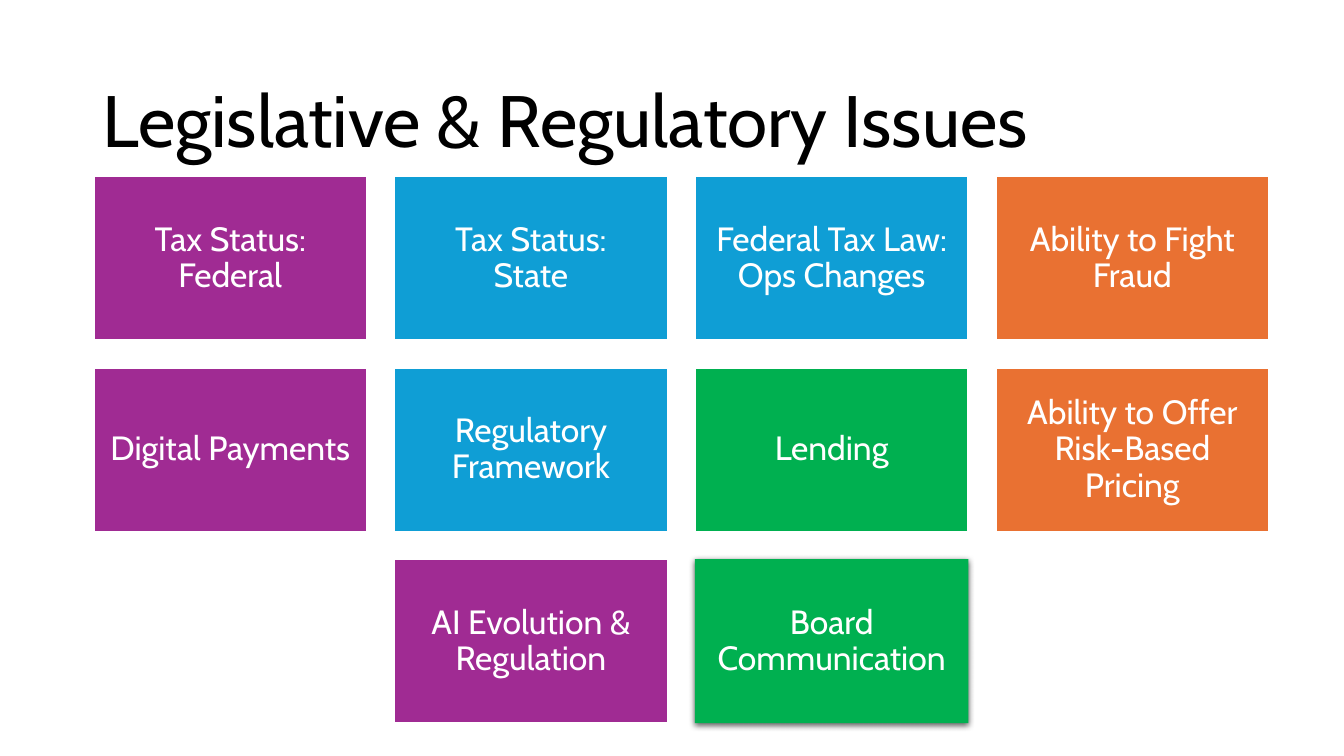
import pptx
import pptx.dml.color
import pptx.enum.shapes
import pptx.enum.text
import pptx.oxml.ns
import pptx.util
from lxml import etree

Pt = pptx.util.Pt

FONT = "Cabin"
WHITE, BLACK = "FFFFFF", "000000"
PURPLE, BLUE, GREEN, ORANGE = "A02B93", "0F9ED5", "00B050", "E97132"

TITLE = "Legislative & Regulatory Issues"
ISSUE_ROWS = [
    [
        (["Tax Status: Federal"], PURPLE),
        (["Tax Status:", "State"], BLUE),
        (["Federal Tax Law: Ops Changes"], BLUE),
        (["Ability to Fight Fraud"], ORANGE),
    ],
    [
        (["Digital Payments"], PURPLE),
        (["Regulatory Framework"], BLUE),
        (["Lending"], GREEN),
        (["Ability to Offer Risk-Based Pricing"], ORANGE),
    ],
    [
        (["AI Evolution & Regulation"], PURPLE),
        (["Board Communication"], GREEN),
    ],
]
RAISED_ISSUE = "Board Communication"

COLUMNS = 4
GRID_LEFT, GRID_TOP = 66.8, 126
TILE_WIDTH, TILE_HEIGHT = 195.3, 117.2
GAP = 19.5
TILE_INSET = 7.2


def color(hex_value):
    return pptx.dml.color.RGBColor.from_string(hex_value)


def write(text_frame, lines, size, hex_value, alignment):
    text_frame.word_wrap = True
    text_frame.vertical_anchor = pptx.enum.text.MSO_ANCHOR.MIDDLE
    paragraph = text_frame.paragraphs[0]
    paragraph.alignment = alignment
    paragraph.line_spacing = 0.9
    for index, line in enumerate(lines):
        if index:
            paragraph.add_line_break()
        run = paragraph.add_run()
        run.text = line
        run.font.name = FONT
        run.font.size = Pt(size)
        run.font.color.rgb = color(hex_value)


def add_soft_shadow(shape):
    qn = pptx.oxml.ns.qn
    effects = shape._element.spPr.find(qn("a:effectLst"))
    shadow = etree.SubElement(
        effects, qn("a:outerShdw"), blurRad=str(Pt(4.5)), dist=str(Pt(1.5)),
        dir="5400000", algn="ctr", rotWithShape="0")
    shadow_color = etree.SubElement(shadow, qn("a:srgbClr"), val=BLACK)
    etree.SubElement(shadow_color, qn("a:alpha"), val="63000")


def add_tile(slide, left, top, lines, fill):
    shape = slide.shapes.add_shape(
        pptx.enum.shapes.MSO_SHAPE.RECTANGLE,
        Pt(left), Pt(top), Pt(TILE_WIDTH), Pt(TILE_HEIGHT))
    shape.shadow.inherit = False
    shape.fill.solid()
    shape.fill.fore_color.rgb = color(fill)
    if lines == [RAISED_ISSUE]:
        shape.line.fill.background()
        add_soft_shadow(shape)
    else:
        shape.line.color.rgb = color(WHITE)
        shape.line.width = Pt(1.5)
    frame = shape.text_frame
    frame.margin_left = frame.margin_right = Pt(TILE_INSET)
    frame.margin_top = frame.margin_bottom = Pt(TILE_INSET)
    write(frame, lines, 24, WHITE, pptx.enum.text.PP_ALIGN.CENTER)


def main():
    presentation = pptx.Presentation()
    presentation.slide_width, presentation.slide_height = Pt(960), Pt(540)
    slide = presentation.slides.add_slide(presentation.slide_layouts[6])

    title = slide.shapes.add_textbox(Pt(66), Pt(44), Pt(828), Pt(89))
    write(title.text_frame, [TITLE], 52, BLACK, pptx.enum.text.PP_ALIGN.LEFT)

    for row, issues in enumerate(ISSUE_ROWS):
        first_column = (COLUMNS - len(issues)) / 2
        top = GRID_TOP + row * (TILE_HEIGHT + GAP)
        for column, (lines, fill) in enumerate(issues):
            left = GRID_LEFT + (first_column + column) * (TILE_WIDTH + GAP)
            add_tile(slide, left, top, lines, fill)

    presentation.save("out.pptx")


if __name__ == "__main__":
    main()
